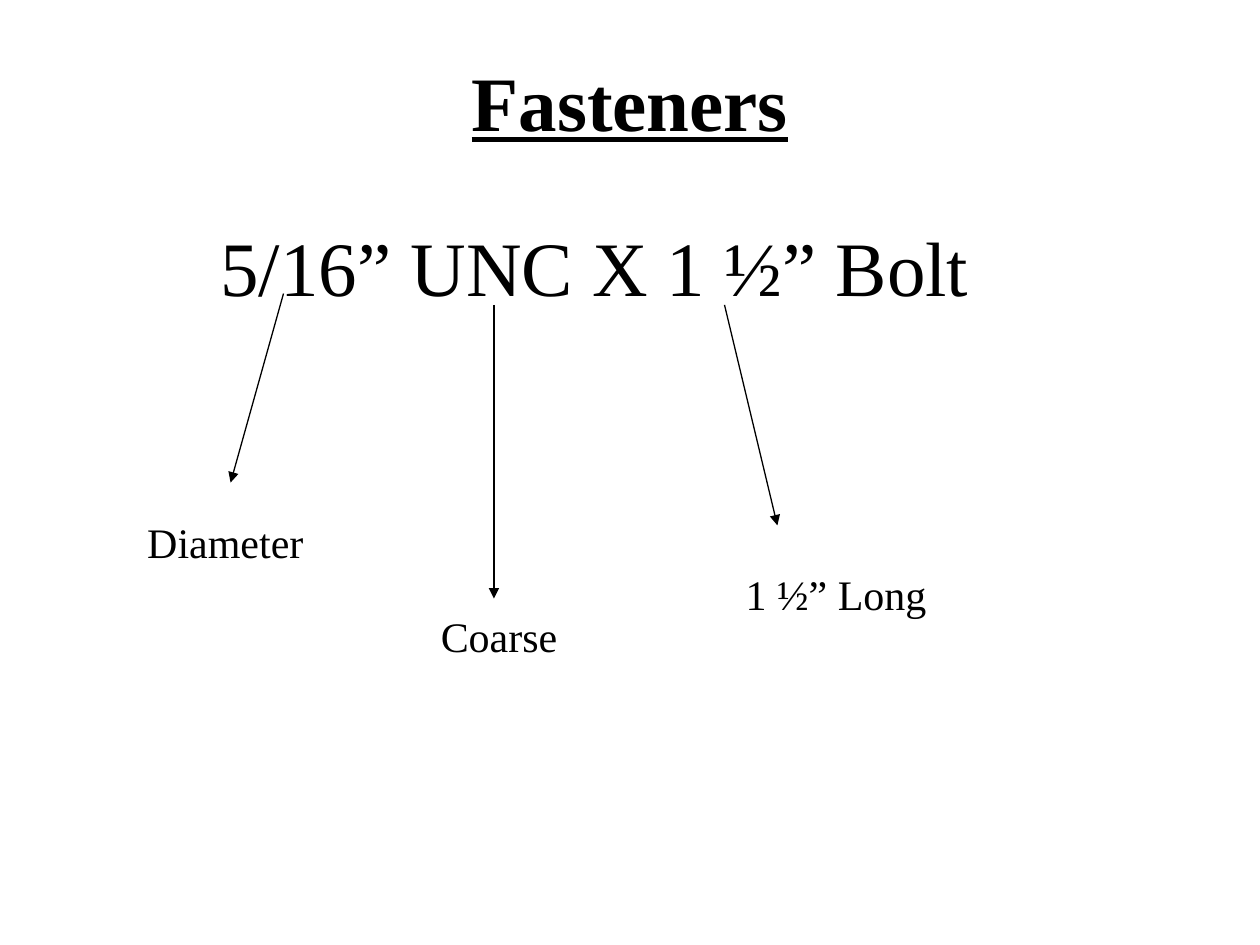
"""Build a slide that explains the parts of a bolt designation."""
from lxml import etree
from pptx import Presentation
from pptx.dml.color import RGBColor
from pptx.enum.shapes import MSO_CONNECTOR
from pptx.enum.text import MSO_ANCHOR, MSO_AUTO_SIZE, PP_ALIGN
from pptx.oxml.ns import qn
from pptx.util import Inches, Pt

BLACK = RGBColor(0x00, 0x00, 0x00)
FONT = "Times New Roman"
STRAIGHT = MSO_CONNECTOR.STRAIGHT
TOP, MIDDLE = MSO_ANCHOR.TOP, MSO_ANCHOR.MIDDLE
LEFT, CENTER = PP_ALIGN.LEFT, PP_ALIGN.CENTER
NO_FIT, GROW = MSO_AUTO_SIZE.NONE, MSO_AUTO_SIZE.SHAPE_TO_FIT_TEXT

presentation = Presentation()
presentation.slide_width = Inches(10)
presentation.slide_height = Inches(7.5)
slide = presentation.slides.add_slide(presentation.slide_layouts[6])


def add_text(text, box, size, bold=False, underline=False, align=LEFT,
             anchor=TOP, wrap=False, fit=GROW):
    shape = slide.shapes.add_textbox(*(Inches(length) for length in box))
    frame = shape.text_frame
    frame.word_wrap = wrap
    frame.auto_size = fit
    frame.vertical_anchor = anchor
    paragraph = frame.paragraphs[0]
    paragraph.alignment = align
    run = paragraph.add_run()
    run.text = text
    run.font.name = FONT
    run.font.size = Pt(size)
    run.font.bold = bold
    run.font.underline = underline
    run.font.color.rgb = BLACK


add_text("Fasteners", (0.75, 0.42, 8.5, 0.75), size=44, bold=True,
         underline=True, align=CENTER, anchor=MIDDLE, wrap=True, fit=NO_FIT)
add_text("5/16” UNC X 1 ½” Bolt", (1.65, 1.69, 6.3, 0.83), size=44)

callouts = [
    ("Diameter", (1.07, 4.05, 1.52, 0.5), (2.25, 2.33, 1.83, 3.83)),
    ("Coarse", (3.4, 4.8, 1.13, 0.5), (3.92, 2.42, 3.92, 4.75)),
    ("1 ½” Long", (5.82, 4.46, 1.64, 0.5), (5.75, 2.42, 6.17, 4.17)),
]
for label, box, ends in callouts:
    arrow = slide.shapes.add_connector(
        STRAIGHT, *(Inches(length) for length in ends))
    arrow.line.color.rgb = BLACK
    arrow.line.width = Pt(0.75)
    line = arrow.line._get_or_add_ln()
    etree.SubElement(line, qn("a:tailEnd"), type="triangle")
    etree.SubElement(arrow._element.spPr, qn("a:effectLst"))
    add_text(label, box, size=24)

presentation.save("out.pptx")
